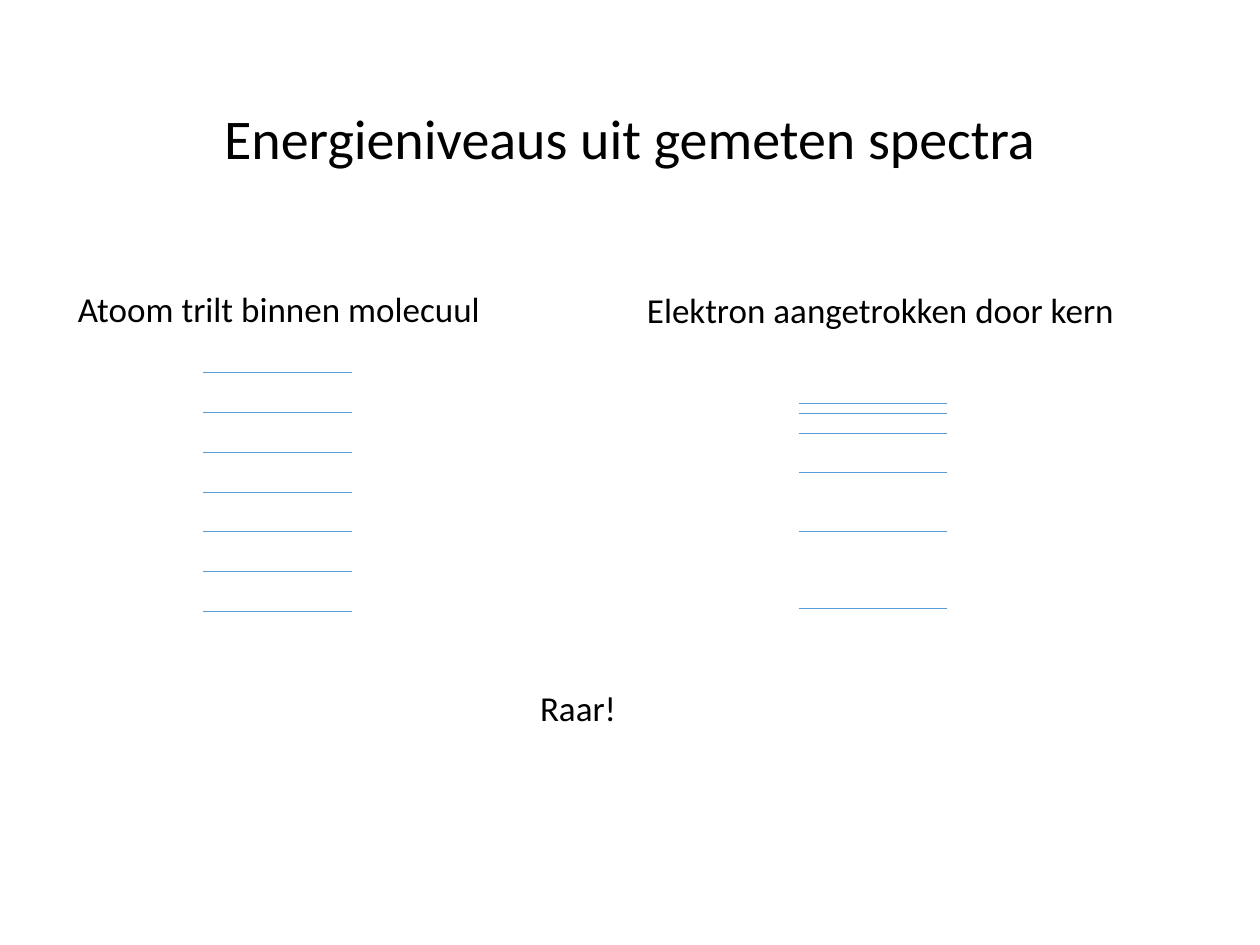
from dataclasses import dataclass

from pptx import Presentation
from pptx.dml.color import RGBColor
from pptx.enum.shapes import MSO_CONNECTOR
from pptx.enum.text import MSO_ANCHOR, MSO_AUTO_SIZE, PP_ALIGN
from pptx.oxml.ns import qn
from pptx.util import Inches, Pt

STRAIGHT = MSO_CONNECTOR.STRAIGHT
TOP, MIDDLE = MSO_ANCHOR.TOP, MSO_ANCHOR.MIDDLE
CENTER, RIGHT = PP_ALIGN.CENTER, PP_ALIGN.RIGHT
FIT_SHAPE, NO_FIT = MSO_AUTO_SIZE.SHAPE_TO_FIT_TEXT, MSO_AUTO_SIZE.NONE

BLACK = RGBColor(0x00, 0x00, 0x00)
LEVEL_BLUE = RGBColor(0x5B, 0x9B, 0xD5)
FONT = "Calibri"
LEVEL_WIDTH = 1.18


@dataclass
class Box:
    left: float
    top: float
    width: float
    height: float


@dataclass
class Spectrum:
    """A heading above a ladder of energy levels."""
    heading: str
    heading_box: Box
    levels_left: float
    levels: list[float]


SPECTRA = [
    Spectrum("Atoom trilt binnen molecuul", Box(0.51, 2.23, 3.4, 0.44),
             1.61, [2.96 + 0.315 * i for i in range(7)]),
    Spectrum("Elektron aangetrokken door kern", Box(5, 2.24, 3.94, 0.44),
             6.34, [3.2, 3.28, 3.44, 3.75, 4.22, 4.83]),
]


def add_text(slide, text: str, box: Box, *, size: int = 20, align=RIGHT,
             anchor=TOP, wrap: bool = False, auto_size=FIT_SHAPE,
             line_spacing: float = 1.0) -> None:
    sp = slide.shapes.add_textbox(Inches(box.left), Inches(box.top),
                                  Inches(box.width), Inches(box.height))
    tf = sp.text_frame
    tf.word_wrap = wrap
    tf.auto_size = auto_size
    tf.vertical_anchor = anchor
    p = tf.paragraphs[0]
    p.alignment = align
    p.line_spacing = line_spacing
    r = p.add_run()
    r.text = text
    r.font.name = FONT
    r.font.size = Pt(size)
    r.font.color.rgb = BLACK


def add_level(slide, left: float, y: float) -> None:
    line = slide.shapes.add_connector(STRAIGHT, Inches(left), Inches(y),
                                      Inches(left + LEVEL_WIDTH), Inches(y))
    line.line.color.rgb = LEVEL_BLUE
    line.line.width = Pt(0.5)
    sp_pr = line._element.spPr
    sp_pr.append(sp_pr.makeelement(qn("a:effectLst"), {}))


def add_spectrum(slide, spectrum: Spectrum) -> None:
    add_text(slide, spectrum.heading, spectrum.heading_box)
    for y in spectrum.levels:
        add_level(slide, spectrum.levels_left, y)


def main() -> None:
    prs = Presentation()
    prs.slide_width, prs.slide_height = Inches(10), Inches(7.5)
    slide = prs.slides.add_slide(prs.slide_layouts[6])
    add_text(slide, "Energieniveaus uit gemeten spectra",
             Box(0.69, 0.4, 8.62, 1.45), size=32, align=CENTER, anchor=MIDDLE,
             wrap=True, auto_size=NO_FIT, line_spacing=0.9)
    for spectrum in SPECTRA:
        add_spectrum(slide, spectrum)
    add_text(slide, "Raar!", Box(4.18, 5.4, 0.81, 0.44))
    prs.save("out.pptx")


if __name__ == "__main__":
    main()
